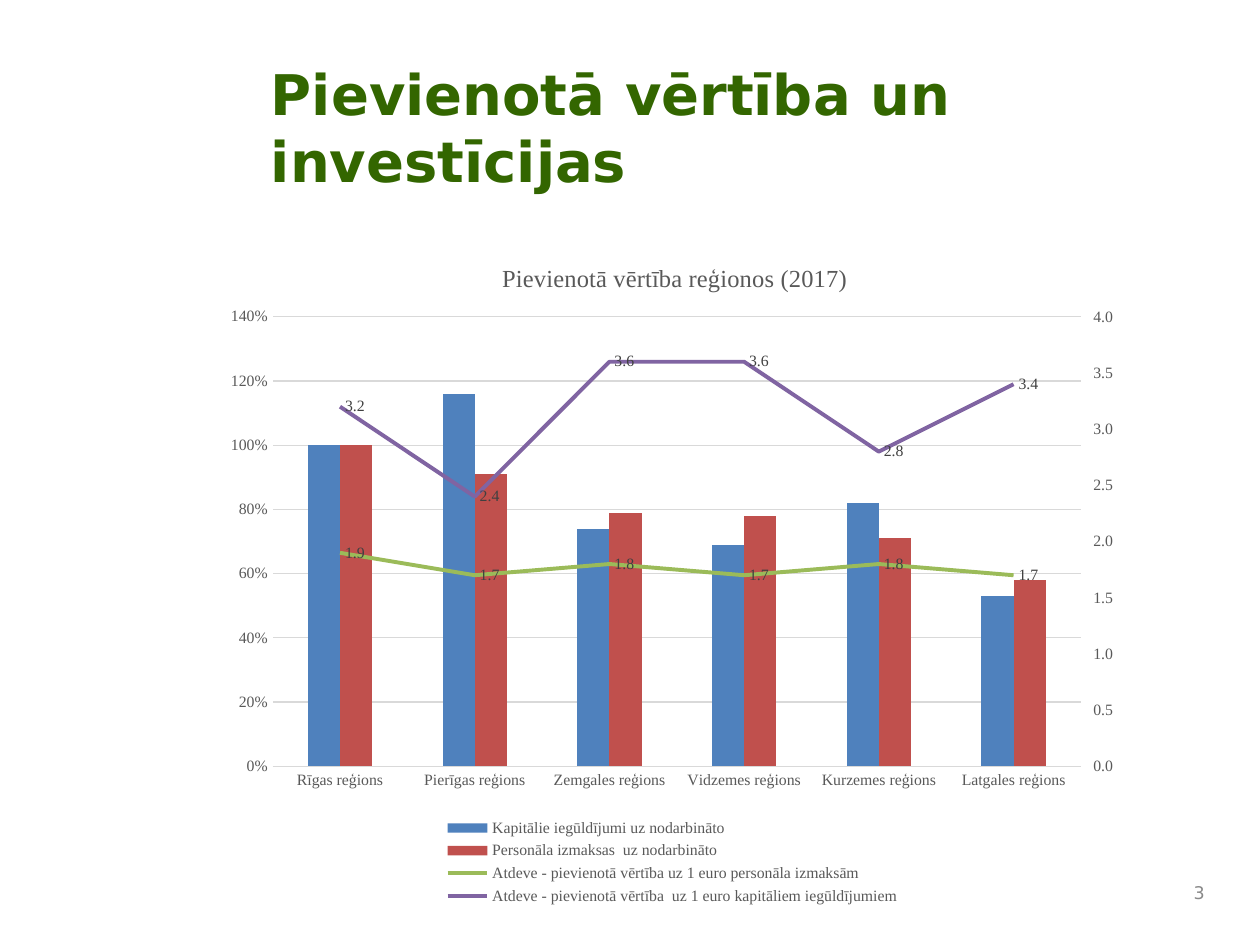
from copy import deepcopy

from lxml import etree
from pptx import Presentation
from pptx.chart.data import CategoryChartData
from pptx.dml.color import RGBColor
from pptx.enum.chart import (XL_CHART_TYPE, XL_LABEL_POSITION, XL_LEGEND_POSITION,
                             XL_MARKER_STYLE, XL_TICK_MARK)
from pptx.enum.text import MSO_ANCHOR, MSO_AUTO_SIZE, PP_ALIGN
from pptx.oxml import parse_xml
from pptx.oxml.ns import nsdecls, qn
from pptx.util import Inches, Pt

COLUMN = XL_CHART_TYPE.COLUMN_CLUSTERED
LEGEND_BOTTOM = XL_LEGEND_POSITION.BOTTOM
LABEL_RIGHT = XL_LABEL_POSITION.RIGHT
NO_MARKER = XL_MARKER_STYLE.NONE
NO_TICK = XL_TICK_MARK.NONE
LEFT, RIGHT = PP_ALIGN.LEFT, PP_ALIGN.RIGHT
TOP, MIDDLE = MSO_ANCHOR.TOP, MSO_ANCHOR.MIDDLE
NO_AUTOFIT = MSO_AUTO_SIZE.NONE
TITLE_ONLY = 5

REGIONS = [f"{name} reģions" for name in
           ("Rīgas", "Pierīgas", "Zemgales", "Vidzemes", "Kurzemes", "Latgales")]
COLUMNS = [
    ("Kapitālie iegūldījumi uz nodarbināto", "4F81BD", (1, 1.16, 0.74, 0.69, 0.82, 0.53)),
    ("Personāla izmaksas  uz nodarbināto", "C0504D", (1, 0.91, 0.79, 0.78, 0.71, 0.58)),
]
LINES = [
    ("Atdeve - pievienotā vērtība uz 1 euro personāla izmaksām", "9BBB59",
     (1.9, 1.7, 1.8, 1.7, 1.8, 1.7)),
    ("Atdeve - pievienotā vērtība  uz 1 euro kapitāliem iegūldījumiem", "8064A2",
     (3.2, 2.4, 3.6, 3.6, 2.8, 3.4)),
]


def color(value):
    return RGBColor.from_string(value)


def format_font(font, name, size, fill, bold=False):
    font.name, font.size, font.bold = name, Pt(size), bold
    font.color.rgb = color(fill)


def write_text(frame, text, font, size, fill, bold=False, align=LEFT, anchor=TOP):
    frame.word_wrap = True
    frame.auto_size = NO_AUTOFIT
    frame.vertical_anchor = anchor
    paragraph = frame.paragraphs[0]
    paragraph.alignment = align
    run = paragraph.add_run()
    run.text = text
    format_font(run.font, font, size, fill, bold)


def place_before(following, **fractions):
    """Set a manual chart layout on the parent of the given element."""
    parent = following.getparent()
    for old in parent.findall(qn("c:layout")):
        parent.remove(old)
    target = '<c:layoutTarget val="inner"/>' if parent.tag == qn("c:plotArea") else ""
    modes = "".join(f'<c:{key}Mode val="edge"/>' for key in "xy")
    values = "".join(f'<c:{key} val="{value}"/>' for key, value in fractions.items())
    following.addprevious(parse_xml(
        f'<c:layout {nsdecls("c")}><c:manualLayout>{target}{modes}{values}'
        '</c:manualLayout></c:layout>'))


def set_values(element, **values):
    for tag, value in values.items():
        element.xpath(f".//c:{tag}")[0].set("val", str(value))


def move_to_right_axis(chart, count):
    """Turn the last series into lines on a second value axis."""
    bar_chart = chart.element.xpath(".//c:barChart")[0]
    line_chart = parse_xml(
        f'<c:lineChart {nsdecls("c")}><c:grouping val="standard"/>'
        '<c:varyColors val="0"/></c:lineChart>')
    for series in bar_chart.findall(qn("c:ser"))[-count:]:
        for flag in series.findall(qn("c:invertIfNegative")):
            series.remove(flag)
        line_chart.append(series)
    for axis_id in (5001, 5002):
        etree.SubElement(line_chart, qn("c:axId")).set("val", str(axis_id))
    bar_chart.addnext(line_chart)

    category_axis = chart.category_axis._element
    value_axis = chart.value_axis._element
    right_axis, hidden_axis = deepcopy(value_axis), deepcopy(category_axis)
    right_axis.remove(right_axis.find(qn("c:majorGridlines")))
    right_axis.find(qn("c:numFmt")).set("formatCode", "0.0")
    set_values(right_axis, axId=5002, crossAx=5001, axPos="r", crosses="max",
               max=4, majorUnit=0.5, majorTickMark="out")
    set_values(hidden_axis, axId=5001, crossAx=5002, delete=1)
    value_axis.addnext(right_axis)
    right_axis.addnext(hidden_axis)


class SlideBuilder:
    heading_font = "DejaVu Sans"
    chart_font = "Times New Roman"
    green, gray, label_gray = "336600", "595959", "404040"
    number_gray, grid_gray = "898989", "D9D9D9"

    def __init__(self, presentation):
        self.slide = presentation.slides.add_slide(presentation.slide_layouts[TITLE_ONLY])

    def add_title(self, text, left, top, width, height):
        title = self.slide.shapes.title
        title.left, title.top, title.width, title.height = map(
            Inches, (left, top, width, height))
        write_text(title.text_frame, text, self.heading_font, 32, self.green, bold=True)

    def add_number(self, text, left, top, width, height):
        box = self.slide.shapes.add_textbox(*map(Inches, (left, top, width, height)))
        write_text(box.text_frame, text, self.heading_font, 10, self.number_gray,
                   align=RIGHT, anchor=MIDDLE)

    def add_chart(self, title, left, top, width, height):
        data = CategoryChartData()
        data.categories = REGIONS
        for name, _, values in COLUMNS + LINES:
            data.add_series(name, values)
        chart = self.slide.shapes.add_chart(
            COLUMN, *map(Inches, (left, top, width, height)), data).chart
        format_font(chart.font, self.chart_font, 10, "000000")
        chart.has_title = True
        write_text(chart.chart_title.text_frame, title, self.chart_font, 14, self.gray,
                   align=PP_ALIGN.CENTER)
        chart.has_legend = True
        chart.legend.position = LEGEND_BOTTOM
        chart.legend.include_in_layout = False
        format_font(chart.legend.font, self.chart_font, 9, self.gray)
        self.format_axes(chart)
        move_to_right_axis(chart, len(LINES))
        self.format_series(chart)

        root = chart.element
        place_before(root.xpath(".//c:barChart")[0], x=0.065, y=0.127, w=0.88, h=0.662)
        place_before(root.xpath("./c:chart/c:title/c:overlay")[0], x=0.31, y=0.04)
        place_before(root.xpath(".//c:legend/c:overlay")[0], x=0.25, y=0.86, w=0.5, h=0.14)

    def format_axes(self, chart):
        category_axis, value_axis = chart.category_axis, chart.value_axis
        for axis in (category_axis, value_axis):
            axis.major_tick_mark = axis.minor_tick_mark = NO_TICK
            format_font(axis.tick_labels.font, self.chart_font, 9, self.gray)
        value_axis.minimum_scale, value_axis.maximum_scale = 0, 1.4
        value_axis.major_unit = 0.2
        value_axis.tick_labels.number_format = "0%"
        value_axis.tick_labels.number_format_is_linked = False
        value_axis.format.line.fill.background()
        value_axis.has_major_gridlines = True
        for line in (category_axis.format.line, value_axis.major_gridlines.format.line):
            line.color.rgb = color(self.grid_gray)
            line.width = Pt(0.75)

    def format_series(self, chart):
        columns, lines = chart.plots
        columns.gap_width, columns.overlap = 219, 0
        columns.vary_by_categories = False
        for series, (_, fill, _) in zip(columns.series, COLUMNS):
            series.format.fill.solid()
            series.format.fill.fore_color.rgb = color(fill)
        for series, (_, stroke, _) in zip(lines.series, LINES):
            series.format.line.color.rgb = color(stroke)
            series.format.line.width = Pt(2.25)
            series.marker.style = NO_MARKER
            series.smooth = False
            labels = series.data_labels
            labels.show_value = True
            labels.position = LABEL_RIGHT
            labels.number_format = "0.0"
            labels.number_format_is_linked = False
            format_font(labels.font, self.chart_font, 9, self.label_gray)


def main():
    presentation = Presentation()
    presentation.slide_width, presentation.slide_height = Inches(10), Inches(7.5)
    builder = SlideBuilder(presentation)
    builder.add_title("Pievienotā vērtība un investīcijas", 2.05, 0.42, 7.74, 1.13)
    builder.add_chart("Pievienotā vērtība reģionos (2017)", 1.69, 1.83, 7.29, 5.39)
    builder.add_number("3", 9.33, 6.92, 0.33, 0.33)
    presentation.save("out.pptx")


if __name__ == "__main__":
    main()
